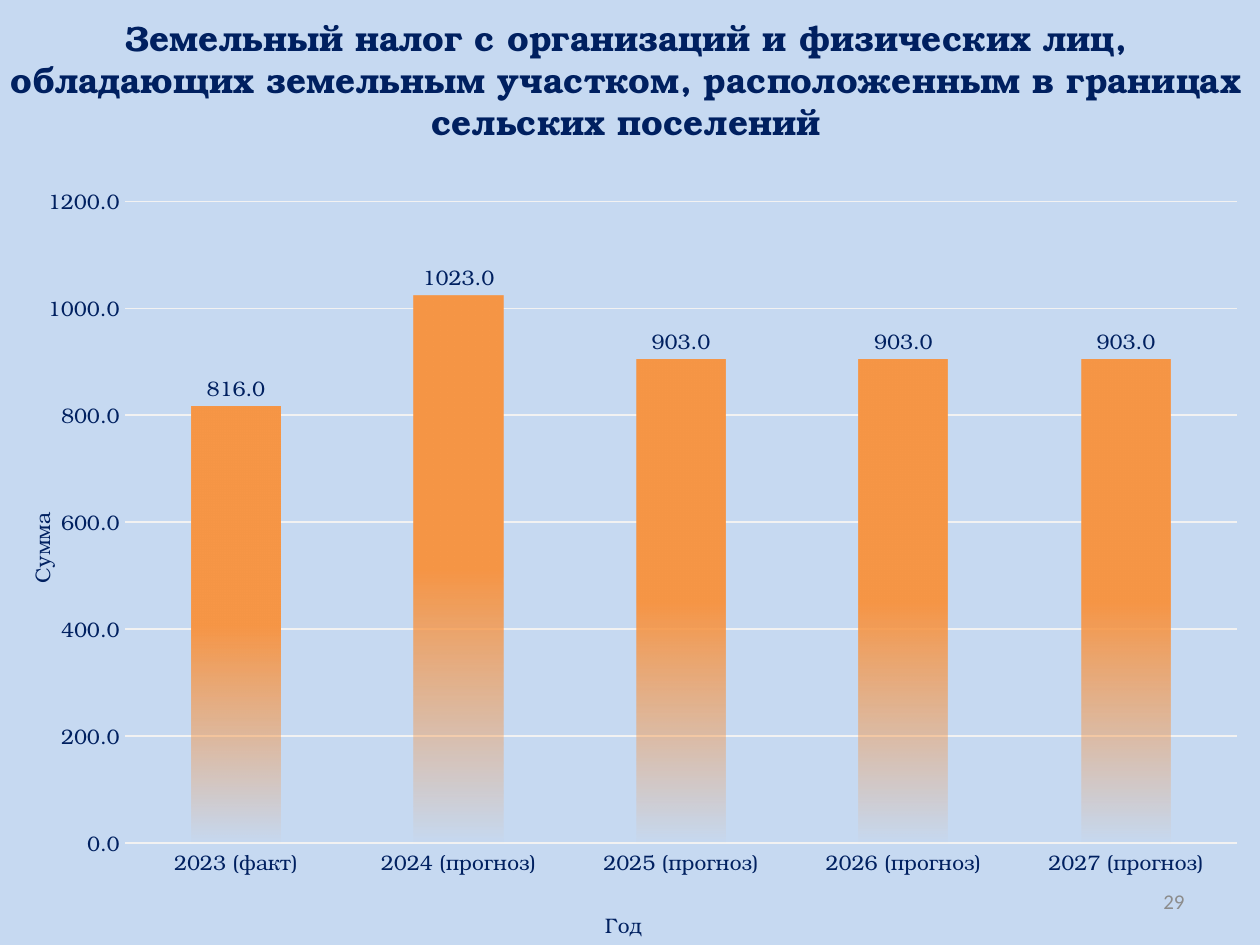
import pptx
import pptx.util
import pptx.oxml
import pptx.chart.data
import pptx.dml.color
import pptx.enum.chart
import pptx.enum.text
from pptx.oxml.ns import nsdecls

TITLE = ("Земельный налог с организаций и физических лиц, обладающих земельным "
         "участком, расположенным в границах сельских поселений")
PAGE = "29"
TAXES = {"2023 (факт)": 816, "2024 (прогноз)": 1023, "2025 (прогноз)": 903,
         "2026 (прогноз)": 903, "2027 (прогноз)": 903}
SERIF = "TeX Gyre Bonum"
NAVY, ORANGE, PALE, GRAY, SKY = "002060", "F79646", "F2F2F2", "8C8C8C", "C6D9F1"
W, H = 10, 7.5
ALIGN = pptx.enum.text.PP_ALIGN


def rgb(color):
    return pptx.dml.color.RGBColor.from_string(color)


def set_font(font, size, color=NAVY, name=SERIF, bold=False):
    font.size, font.name, font.bold = pptx.util.Pt(size), name, bold
    font.color.rgb = rgb(color)


def box(x, y, w, h):
    """Turn shares of the slide into lengths."""
    return [pptx.util.Inches(v) for v in (x * W, y * H, w * W, h * H)]


def add_text(s, place, text, align, *font):
    tf = s.shapes.add_textbox(*box(*place)).text_frame
    tf.word_wrap = True
    tf.vertical_anchor = pptx.enum.text.MSO_ANCHOR.MIDDLE
    p = tf.paragraphs[0]
    p.text, p.alignment = text, align
    set_font(p.font, *font)


def layout(x, y, w=None, h=None):
    """Manual chart layout in shares of the chart's size."""
    target = '<c:layoutTarget val="inner"/>' if w else ""
    modes = '<c:xMode val="edge"/><c:yMode val="edge"/>'
    sizes = "".join(f'<c:{k} val="{v}"/>' for k, v in zip("xywh", (x, y, w, h)) if v)
    return pptx.oxml.parse_xml(f'<c:layout {nsdecls("c")}><c:manualLayout>{target}{modes}'
                               f'{sizes}</c:manualLayout></c:layout>')


def set_layout(element, new, index):
    for old in element.findall(pptx.oxml.ns.qn("c:layout")):
        element.remove(old)
    element.insert(index, new)


def style_axis(axis, title, x, y):
    axis.major_tick_mark = axis.minor_tick_mark = pptx.enum.chart.XL_TICK_MARK.NONE
    axis.format.line.fill.background()
    set_font(axis.tick_labels.font, 12)
    tf = axis.axis_title.text_frame
    tf.text = title
    set_font(tf.paragraphs[0].font, 12)
    set_layout(axis.axis_title._element, layout(x, y), 1)


prs = pptx.Presentation()
prs.slide_width, prs.slide_height = pptx.util.Inches(W), pptx.util.Inches(H)
s = prs.slides.add_slide(prs.slide_layouts[6])
s.background.fill.solid()
s.background.fill.fore_color.rgb = rgb(SKY)

# Title and page number
add_text(s, (-0.003, 0.028, 1, 0.112), TITLE, ALIGN.CENTER, 20, NAVY, SERIF, True)
add_text(s, (0.717, 0.927, 0.233, 0.053), PAGE, ALIGN.RIGHT, 12, GRAY, "Calibri")

# Column chart
data = pptx.chart.data.CategoryChartData(number_format="0.0")
data.categories = list(TAXES)
data.add_series("Сумма", list(TAXES.values()))
chart = s.shapes.add_chart(pptx.enum.chart.XL_CHART_TYPE.COLUMN_CLUSTERED,
                           *box(-0.003, 0.161, 1, 0.839), data).chart
chart.has_legend = chart.has_title = False
set_font(chart.font, 10)
plot = chart.plots[0]
plot.gap_width, plot.vary_by_categories = 150, False
set_layout(chart._chartSpace.chart.plotArea, layout(0.102, 0.062, 0.883, 0.81), 0)

# Axes
style_axis(chart.category_axis, "Год", 0.48, 0.95)
axis = chart.value_axis
style_axis(axis, "Сумма", 0.02, 0.45)
axis.minimum_scale, axis.maximum_scale, axis.major_unit = 0, 1200, 200
axis.tick_labels.number_format = "0.0"
axis.tick_labels.number_format_is_linked = False
grid = axis.major_gridlines.format.line
grid.color.rgb, grid.width = rgb(PALE), pptx.util.Pt(0.75)

# Value labels
plot.has_data_labels = True
labels = plot.data_labels
labels.show_value = True
labels.number_format, labels.number_format_is_linked = "0.0", False
labels.position = pptx.enum.chart.XL_LABEL_POSITION.OUTSIDE_END
set_font(labels.font, 12)

# Columns fade out in their lower half
columns = plot.series[0]
columns.invert_if_negative = False
stops = "".join(f'<a:gs pos="{pos}000"><a:srgbClr val="{ORANGE}"><a:alpha val="{alpha}000"/>'
                f'</a:srgbClr></a:gs>' for pos, alpha in ((0, 100), (50, 100), (100, 0)))
columns.format.line.fill.background()
columns._element.spPr.insert(0, pptx.oxml.parse_xml(
    f'<a:gradFill {nsdecls("a")}><a:gsLst>{stops}</a:gsLst>'
    f'<a:lin ang="5400000" scaled="0"/></a:gradFill>'))

prs.save("out.pptx")
